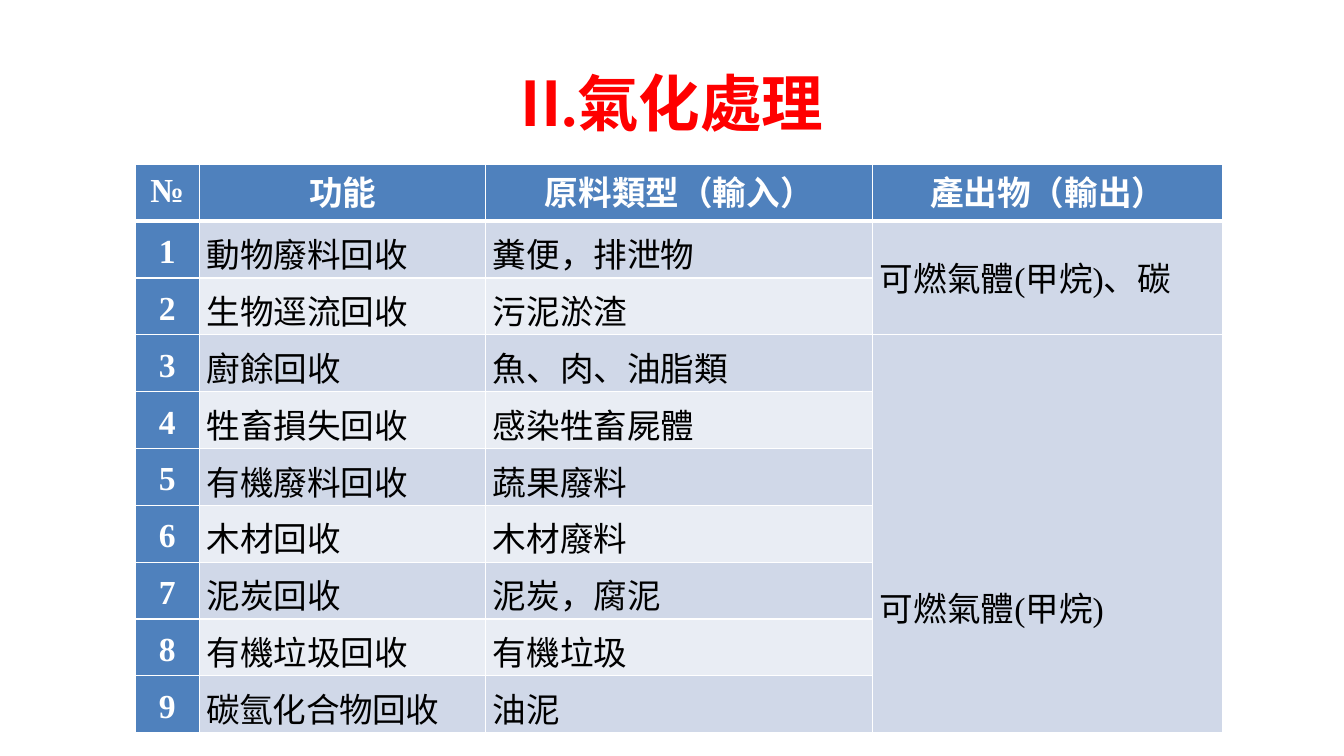
import pptx
import pptx.util
import pptx.dml.color
import pptx.enum.text
import pptx.oxml
import pptx.oxml.ns

RGBColor = pptx.dml.color.RGBColor
Inches = pptx.util.Inches
Pt = pptx.util.Pt
ALIGN = pptx.enum.text.PP_ALIGN
MIDDLE = pptx.enum.text.MSO_ANCHOR.MIDDLE

# Colours and fonts
RED = RGBColor(0xFF, 0x00, 0x00)
WHITE = RGBColor(0xFF, 0xFF, 0xFF)
BLACK = RGBColor(0x00, 0x00, 0x00)
BLUE = RGBColor(0x4F, 0x81, 0xBD)
BANDS = [RGBColor(0xD0, 0xD8, 0xE8), RGBColor(0xE9, 0xED, 0xF4)]
HAN = "Noto Sans CJK SC"
ROMAN = "Times New Roman"

# Content: runs are (text, font)
TITLE = [("II", HAN), (".", ROMAN), ("氣化處理", HAN)]
HEADER = [("№", ROMAN), ("功能", HAN), ("原料類型（輸入）", HAN), ("產出物（輸出）", HAN)]
PROCESSES = [
    ("動物廢料回收", "糞便，排泄物"),
    ("生物逕流回收", "污泥淤渣"),
    ("廚餘回收", "魚、肉、油脂類"),
    ("牲畜損失回收", "感染牲畜屍體"),
    ("有機廢料回收", "蔬果廢料"),
    ("木材回收", "木材廢料"),
    ("泥炭回收", "泥炭，腐泥"),
    ("有機垃圾回收", "有機垃圾"),
    ("碳氫化合物回收", "油泥"),
]
METHANE = [("可燃氣體", HAN), ("(", ROMAN), ("甲烷", HAN), (")", ROMAN)]
# Outputs: first row, last row, runs, line spacing, top inset in inches
OUTPUTS = [
    (1, 2, METHANE + [("、碳", HAN)], 0.9, 0),
    (3, 9, METHANE, 1.15, 1.38),
]

# Grid
COLUMNS = [0.64, 2.84, 3.84, 3.47]
ROW_HEIGHT = 0.564
TABLE_LEFT, TABLE_TOP = 1.34, 1.63
CELL_INSET = 0.07


def write(para, runs, size, color, bold, align, spacing):
    para.alignment = align
    para.line_spacing = spacing
    for text, font in runs:
        span = para.add_run()
        span.text = text
        span.font.size = Pt(size)
        span.font.bold = bold
        span.font.color.rgb = color
        span.font.name = font
        east_asian = pptx.oxml.parse_xml(
            f'<a:ea {pptx.oxml.ns.nsdecls("a")} typeface="{font}"/>')
        span.font._element.append(east_asian)


def style_cell(cell, fill, top, bottom):
    cell.fill.solid()
    cell.fill.fore_color.rgb = fill
    cell.vertical_anchor = MIDDLE
    cell.margin_left = cell.margin_right = Inches(CELL_INSET)
    cell.margin_top = cell.margin_bottom = 0
    properties = cell._tc.get_or_add_tcPr()
    borders = [("lnL", 1), ("lnR", 1), ("lnT", top), ("lnB", bottom)]
    for place, (side, width) in enumerate(borders):
        properties.insert(place, pptx.oxml.parse_xml(
            f'<a:{side} {pptx.oxml.ns.nsdecls("a")} w="{Pt(width)}">'
            f'<a:solidFill><a:srgbClr val="{WHITE}"/></a:solidFill></a:{side}>'))


def main():
    deck = pptx.Presentation()
    deck.slide_width, deck.slide_height = Inches(13.333), Inches(7.5)
    page = deck.slides.add_slide(deck.slide_layouts[6])

    # Title
    box = page.shapes.add_textbox(Inches(0.67), Inches(0.2), Inches(12), Inches(1.25))
    box.text_frame.word_wrap = True
    box.text_frame.vertical_anchor = MIDDLE
    write(box.text_frame.paragraphs[0], TITLE, 44, RED, True, ALIGN.CENTER, 1.5)

    # Table grid
    row_count = len(PROCESSES) + 1
    table = page.shapes.add_table(
        row_count, len(COLUMNS), Inches(TABLE_LEFT), Inches(TABLE_TOP),
        Inches(sum(COLUMNS)), Inches(ROW_HEIGHT * row_count)).table
    for column, width in zip(table.columns, COLUMNS):
        column.width = Inches(width)
    for number, row in enumerate(table.rows):
        row.height = Inches(ROW_HEIGHT)
        for index, cell in enumerate(row.cells):
            if number == 0 or index == 0:
                fill = BLUE
            elif index == 3:
                fill = BANDS[0]
            else:
                fill = BANDS[(number - 1) % 2]
            style_cell(cell, fill, 3 if number == 1 else 1, 3 if number == 0 else 1)

    # Header row
    for index, run in enumerate(HEADER):
        write(table.cell(0, index).text_frame.paragraphs[0], [run],
              24, WHITE, True, ALIGN.CENTER, 0.9)

    # Numbered processes
    for number, process in enumerate(PROCESSES, start=1):
        write(table.cell(number, 0).text_frame.paragraphs[0], [(str(number), ROMAN)],
              24, WHITE, True, ALIGN.CENTER, 1.15)
        for index, text in enumerate(process, start=1):
            write(table.cell(number, index).text_frame.paragraphs[0], [(text, HAN)],
                  24, BLACK, False, ALIGN.LEFT, 1.15)
    tight_run = table.cell(9, 1).text_frame.paragraphs[0].runs[0]
    tight_run.font._element.set("spc", "-30")

    # Merged outputs
    for first, last, runs, spacing, inset in OUTPUTS:
        cell = table.cell(first, 3)
        cell.merge(table.cell(last, 3))
        cell.margin_top = Inches(inset)
        write(cell.text_frame.paragraphs[0], runs, 24, BLACK, False, ALIGN.LEFT, spacing)

    deck.save("out.pptx")


if __name__ == "__main__":
    main()
